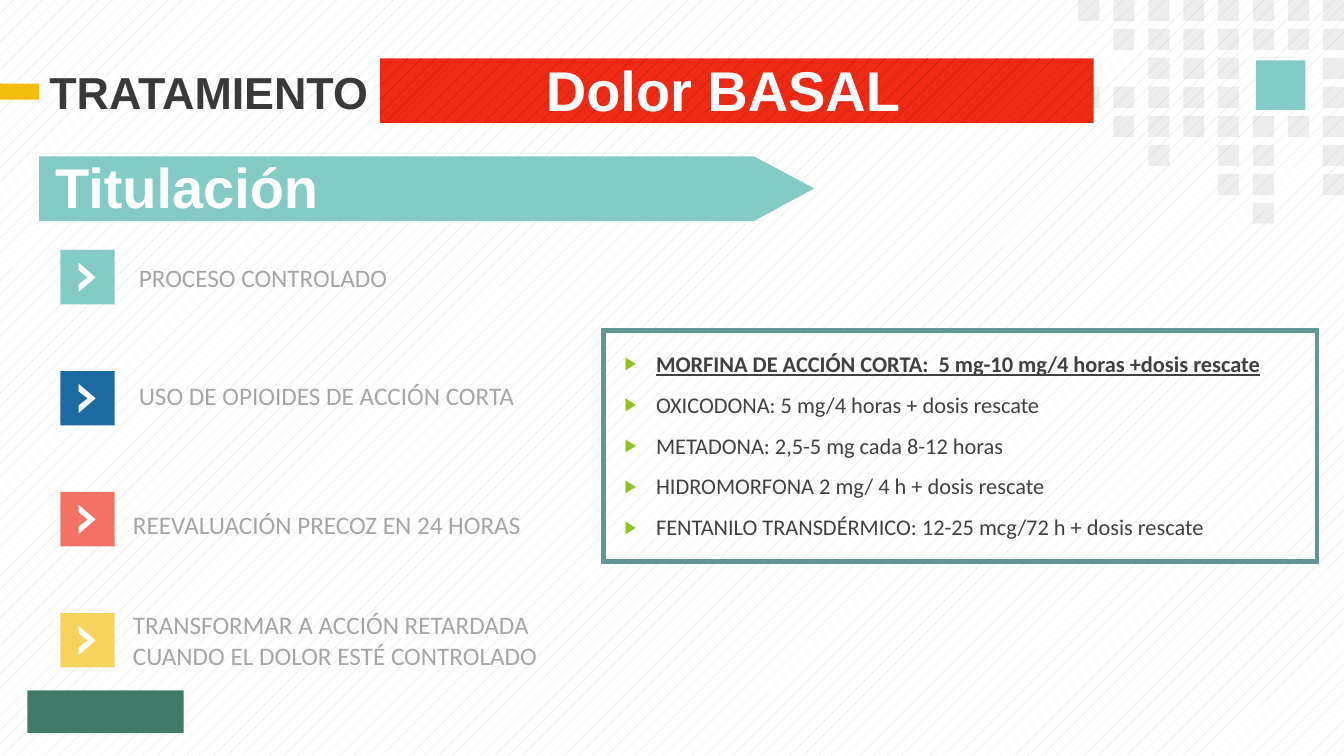
"""Build the slide on titration of basal pain treatment."""
from lxml.etree import SubElement as Sub
from pptx import Presentation
from pptx.dml.color import RGBColor
from pptx.enum.dml import MSO_PATTERN as Pattern
from pptx.enum.shapes import MSO_SHAPE as Shape
from pptx.enum.text import MSO_ANCHOR as Anchor, MSO_AUTO_SIZE as Fit, PP_ALIGN as Align
from pptx.oxml.ns import qn
from pptx.util import Cm, Pt

TEAL, GREY, WHITE = "84CBC5", "A5A5A5", "FFFFFF"
DOTS = ["11111111", "01111111", "00111001", "11111001",
        "01111111", "00101101", "00001101", "00000100"]
STEPS = [
    (TEAL, 3.25, 6.48, "PROCESO CONTROLADO"),
    ("1B6AA3", 3.25, 9.45, "USO DE OPIOIDES DE ACCIÓN CORTA"),
    ("F47264", 3.1, 12.7, "REEVALUACIÓN PRECOZ EN 24 HORAS"),
    ("F8D35C", 3.1, 15.24, "TRANSFORMAR A ACCIÓN RETARDADA CUANDO EL DOLOR ESTÉ CONTROLADO"),
]
DRUGS = [
    "MORFINA DE ACCIÓN CORTA:  5 mg-10 mg/4 horas +dosis rescate",
    "OXICODONA: 5 mg/4 horas + dosis rescate",
    "METADONA: 2,5-5 mg cada 8-12 horas",
    "HIDROMORFONA 2 mg/ 4 h + dosis rescate",
    "FENTANILO TRANSDÉRMICO: 12-25 mcg/72 h + dosis rescate",
]


def tint(color, code):
    color.rgb = RGBColor.from_string(code)


class Page:
    def __init__(self, slide):
        self.slide = slide
        self.shapes = slide.shapes
        self.head, self.body = "Arial", "Calibri"

    def hatch(self, fill, fore, back):
        fill.patterned()
        fill.pattern = Pattern.PERCENT_5
        tint(fill.fore_color, fore)
        tint(fill.back_color, back)

    def paint(self, shape, code):
        shape.shadow.inherit = False
        shape.fill.solid()
        tint(shape.fill.fore_color, code)
        shape.line.fill.background()
        return shape

    def rect(self, x, y, w, h, code):
        box = self.shapes.add_shape(Shape.RECTANGLE, Cm(x), Cm(y), Cm(w), Cm(h))
        return self.paint(box, code)

    def frame(self, x, y, w, h, code, width):
        box = self.rect(x, y, w, h, WHITE)
        box.fill.background()
        tint(box.line.color, code)
        box.line.width = Pt(width)
        Sub(box._element.spPr.find(qn("a:ln")), qn("a:miter")).set("lim", "800000")

    def fade(self, shape, share):
        color = shape.fill._xPr.find(qn("a:solidFill"))[0]
        Sub(color, qn("a:alpha")).set("val", str(share * 1000))

    def poly(self, x, y, points, code):
        spots = [(Cm(x + dx), Cm(y + dy)) for dx, dy in points]
        path = self.shapes.build_freeform(*spots[0])
        path.add_line_segments(spots[1:], close=True)
        return self.paint(path.convert_to_shape(), code)

    def style(self, para, face, size, code, bold=False):
        font = para.font
        font.name, font.size, font.bold = face, Pt(size), bold
        tint(font.color, code)

    def place(self, shape, x, y, w, h):
        shape.left, shape.top, shape.width, shape.height = Cm(x), Cm(y), Cm(w), Cm(h)
        shape.text_frame.auto_size = Fit.NONE

    def text(self, x, y, w, h, words, face, size, code, bold=False):
        box = self.shapes.add_textbox(Cm(x), Cm(y), Cm(w), Cm(h))
        frame = box.text_frame
        frame.word_wrap = True
        frame.text = words
        self.style(frame.paragraphs[0], face, size, code, bold)
        return frame

    def title(self, x, y, w, h, words):
        box = self.shapes.title
        self.place(box, x, y, w, h)
        box.text_frame.text = words
        box.text_frame.vertical_anchor = Anchor.MIDDLE
        para = box.text_frame.paragraphs[0]
        para.alignment = Align.LEFT
        self.style(para, self.head, 32, "3A3838", True)

    def bullet(self, para):
        props = para._p.get_or_add_pPr()
        props.set("marL", str(Cm(2.06)))
        props.set("indent", str(Cm(-0.79)))
        Sub(Sub(props, qn("a:buClr")), qn("a:srgbClr")).set("val", "90C226")
        Sub(props, qn("a:buSzPct")).set("val", "80000")
        Sub(props, qn("a:buFont")).set("typeface", "Arial")
        Sub(props, qn("a:buChar")).set("char", "▶")

    def items(self, x, y, w, h, lines):
        box = self.slide.placeholders[1]
        self.place(box, x, y, w, h)
        frame = box.text_frame
        frame.text = "\n".join(lines)
        for rank, para in enumerate(frame.paragraphs):
            self.bullet(para)
            para.space_before = Pt(10 if rank else 0)
            self.style(para, self.body, 16, "404040", rank == 0)
            para.font.underline = rank == 0

    def step(self, y, code):
        self.rect(1.52, y, 1.37, 1.37, code)
        arrow = [(0, 0.55), (0.23, 0.37), (0, 0.19), (0, 0), (0.43, 0.37), (0, 0.74)]
        self.poly(1.98, y + 0.32, arrow, WHITE)


def main():
    deck = Presentation()
    deck.slide_width, deck.slide_height = Cm(33.87), Cm(19.05)
    page = Page(deck.slides.add_slide(deck.slide_layouts[1]))
    page.hatch(page.slide.background.fill, "D9D9D9", WHITE)

    page.rect(31.65, 1.52, 1.25, 1.25, TEAL)
    for row, marks in enumerate(DOTS):
        for col, mark in enumerate(marks):
            if mark == "1":
                dot = page.rect(27.18 + 0.88 * col, 0.73 * row, 0.53, 0.53, GREY)
                page.fade(dot, 20)

    page.rect(0.69, 17.4, 3.94, 1.07, "407A69")

    page.title(0.99, 1.5, 9.9, 1.63, "TRATAMIENTO")
    page.rect(0, 2.11, 0.99, 0.4, "F5BD0B")
    bar = page.rect(9.58, 1.47, 17.98, 1.63, "EE2914")
    page.hatch(bar.fill, "A11A0B", "EE2914")
    pain = page.text(13.51, 1.47, 10.74, 2.08, "Dolor BASAL", page.head, 40, WHITE, True)
    pain.paragraphs[0].line_spacing = 0.9

    banner = [(0, 1.63), (0, 0), (18.01, 0), (19.53, 0.81), (18.01, 1.63)]
    page.poly(0.99, 3.94, banner, TEAL)
    name = page.text(1.14, 3.73, 7.21, 1.96, "Titulación", page.head, 40, WHITE, True)
    name.word_wrap = False

    for rank, (code, x, y, words) in enumerate(STEPS):
        page.step(6.3 + 3.05 * rank, code)
        page.text(x, y, 11.1, 1.02, words, page.body, 18, GREY)

    page.items(14.22, 8.69, 19.25, 5.11, DRUGS)
    page.frame(15.21, 8.33, 17.98, 5.82, "629692", 3)
    deck.save("out.pptx")


if __name__ == "__main__":
    main()
